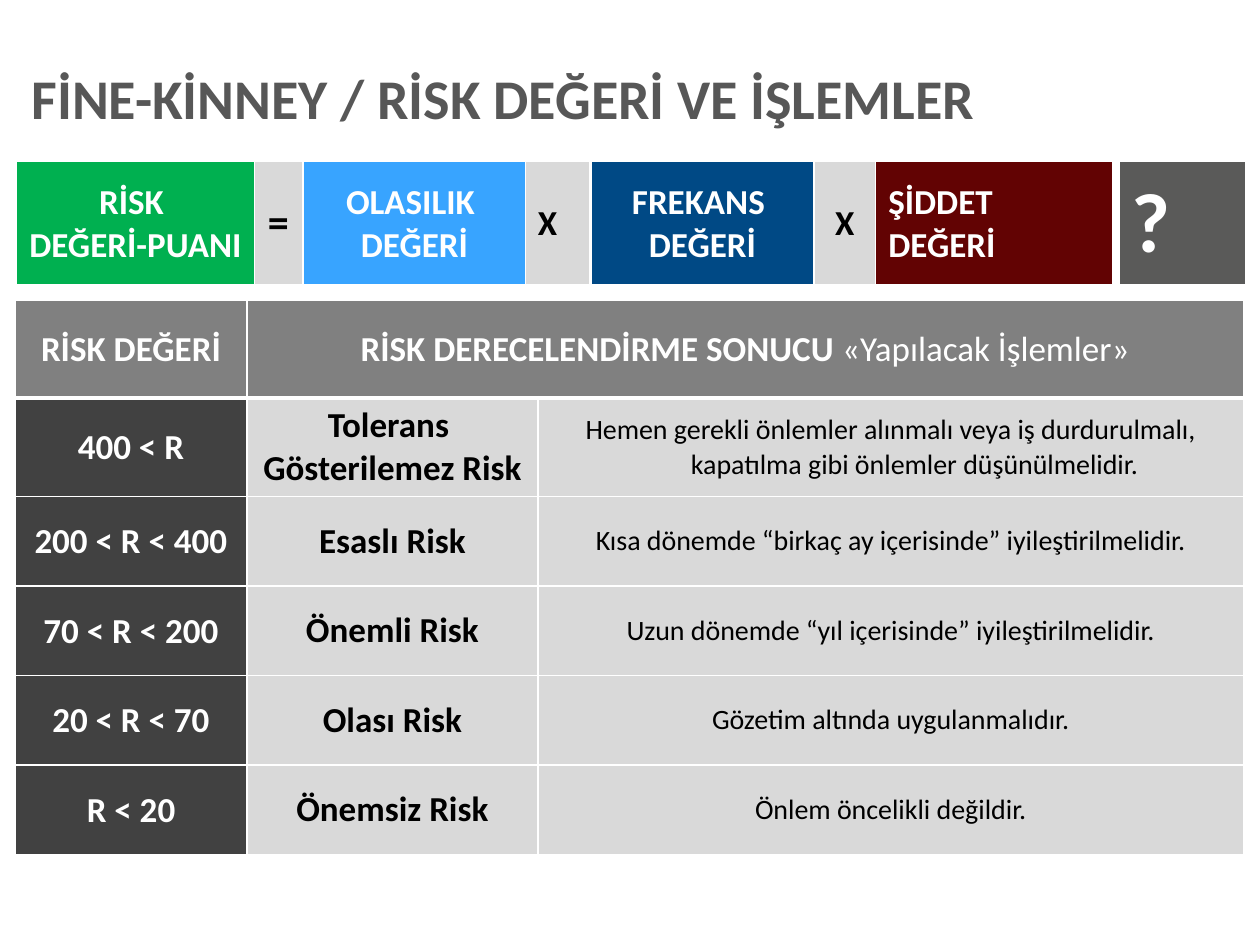
from dataclasses import dataclass
from typing import Optional

from lxml.etree import SubElement
from pptx import Presentation
from pptx.dml.color import RGBColor
from pptx.enum.text import MSO_ANCHOR as Anchor, MSO_AUTO_SIZE as AutoSize, PP_ALIGN as Align
from pptx.oxml.ns import qn
from pptx.util import Inches, Pt

WHITE, BLACK, LIGHT, DARK = "FFFFFF", "000000", "D9D9D9", "414141"
HEADER, TEXT_GREY = "808080", "575757"
TIGHT = dict(margin_left=0.01, margin_right=0.01, margin_top=0.01, margin_bottom=0)


@dataclass
class Run:
    text: str
    size: float = 20
    color: str = WHITE
    bold: bool = True


@dataclass
class Cell:
    paragraphs: list[list[Run]]
    fill: str
    align: Align = Align.CENTER
    hanging: float = 0
    margins: Optional[dict] = None
    bottom: float = 1
    top: float = 1


@dataclass
class Block:
    left: float
    widths: list[float]
    cells: list[Cell]


def rgb(value: str) -> RGBColor:
    return RGBColor.from_string(value)


def add_runs(p, runs: list[Run]) -> None:
    for run in runs:
        r = p.add_run()
        r.text = run.text
        values = dict(name="Calibri", size=Pt(run.size), bold=run.bold)
        for name, value in values.items():
            setattr(r.font, name, value)
        r.font.color.rgb = rgb(run.color)


def set_margins(target, margins: dict) -> None:
    for name, value in margins.items():
        setattr(target, name, Inches(value))


def add_borders(cell, top: float, bottom: float) -> None:
    tc_pr = cell._tc.get_or_add_tcPr()
    for side, width in dict(L=1, R=1, T=top, B=bottom).items():
        ln = SubElement(tc_pr, qn(f"a:ln{side}"), w=str(Pt(width)))
        SubElement(SubElement(ln, qn("a:solidFill")), qn("a:srgbClr"), val=WHITE)


def fill_cell(cell, content: Cell) -> None:
    add_borders(cell, content.top, content.bottom)
    cell.fill.solid()
    cell.fill.fore_color.rgb = rgb(content.fill)
    cell.vertical_anchor = Anchor.MIDDLE
    set_margins(cell, content.margins or {})
    tf = cell.text_frame
    for i, runs in enumerate(content.paragraphs):
        p = tf.add_paragraph() if i else tf.paragraphs[0]
        p.alignment = content.align
        if content.hanging:
            p_pr = p._p.get_or_add_pPr()
            p_pr.set("marL", str(Inches(content.hanging)))
            p_pr.set("indent", str(-Inches(content.hanging)))
        add_runs(p, runs)


def add_grid(slide, left: float, top: float, widths: list[float],
             heights: list[float], rows: list[list[Cell]]):
    frame = slide.shapes.add_table(
        len(heights), len(widths), Inches(left), Inches(top),
        Inches(sum(widths)), Inches(sum(heights)))
    table = frame.table
    table.first_row = table.horz_banding = False
    for column, width in zip(table.columns, widths):
        column.width = Inches(width)
    for row, height in zip(table.rows, heights):
        row.height = Inches(height)
    for i, row in enumerate(rows):
        for j, content in enumerate(row):
            fill_cell(table.cell(i, j), content)
    return table


def factor(lines: list[str], fill: str, align: Align = Align.CENTER, size: float = 20) -> Cell:
    return Cell([[Run(line, size)] for line in lines], fill, align, bottom=3)


def operator(symbol: str, size: float = 20, align: Align = Align.CENTER) -> Cell:
    return Cell([[Run(symbol, size, BLACK)]], LIGHT, align, bottom=3)


def risk_row(score: str, level: list[str], action: str, top: float) -> list[Cell]:
    return [
        Cell([[Run(score)]], DARK, margins=TIGHT, top=top),
        Cell([[Run(line, color=BLACK)] for line in level], LIGHT, hanging=0.38, top=top),
        Cell([[Run(action, 16, BLACK, False)]], LIGHT, hanging=0.38, top=top),
    ]


FORMULA = [
    Block(0.13, [1.89, 0.38], [factor(["RİSK ", "DEĞERİ-PUANI"], "00B050"), operator("=", 24)]),
    Block(2.41, [1.76, 0.51], [factor(["OLASILIK ", "DEĞERİ"], "38A4FF"),
                               operator("X", align=Align.LEFT)]),
    Block(4.69, [1.77, 0.49], [factor(["FREKANS ", "DEĞERİ"], "004985"), operator("X")]),
    Block(6.95, [1.88], [factor(["ŞİDDET", "DEĞERİ"], "620303", Align.LEFT)]),
    Block(8.88, [1.01], [factor(["?"], "5A5A59", Align.LEFT, 48)]),
]

RISKS = [
    ("400 < R", ["Tolerans ", "Gösterilemez Risk"],
     "Hemen gerekli önlemler alınmalı veya iş durdurulmalı, "
     "kapatılma gibi önlemler düşünülmelidir."),
    ("200 < R < 400", ["Esaslı Risk"], "Kısa dönemde “birkaç ay içerisinde” iyileştirilmelidir."),
    ("70 < R < 200", ["Önemli Risk"], "Uzun dönemde “yıl içerisinde” iyileştirilmelidir."),
    ("20 < R < 70", ["Olası Risk"], "Gözetim altında uygulanmalıdır."),
    ("R < 20", ["Önemsiz Risk"], "Önlem öncelikli değildir."),
]


def main() -> None:
    prs = Presentation()
    prs.slide_width, prs.slide_height = Inches(10), Inches(7.5)
    slide = prs.slides.add_slide(prs.slide_layouts[5])

    # Title
    title = slide.shapes.title
    for name, value in dict(left=0.25, top=0.45, width=9.64, height=0.71).items():
        setattr(title, name, Inches(value))
    tf = title.text_frame
    tf.auto_size = AutoSize.NONE
    tf.vertical_anchor = Anchor.MIDDLE
    set_margins(tf, dict(margin_left=0, margin_right=0, margin_top=0.05, margin_bottom=0.05))
    p = tf.paragraphs[0]
    p.alignment, p.line_spacing = Align.LEFT, 0.9
    add_runs(p, [Run("FİNE-KİNNEY / RİSK DEĞERİ VE İŞLEMLER", 32, TEXT_GREY)])

    # Formula strip
    for block in FORMULA:
        add_grid(slide, block.left, 1.28, block.widths, [0.99], [block.cells])

    # Risk rating table
    heading = [Run("RİSK DERECELENDİRME SONUCU "), Run("«Yapılacak İşlemler»", bold=False)]
    rows = [[Cell(runs, HEADER, margins=TIGHT, bottom=3)
             for runs in ([[Run("RİSK DEĞERİ")]], [heading], [])]]
    rows += [risk_row(*risk, top=1 if i else 3) for i, risk in enumerate(RISKS)]
    table = add_grid(slide, 0.12, 2.38, [1.84, 2.31, 5.6], [0.78, 0.78] + [0.71] * 4, rows)
    table.cell(0, 1).merge(table.cell(0, 2))

    prs.save("out.pptx")


if __name__ == "__main__":
    main()
